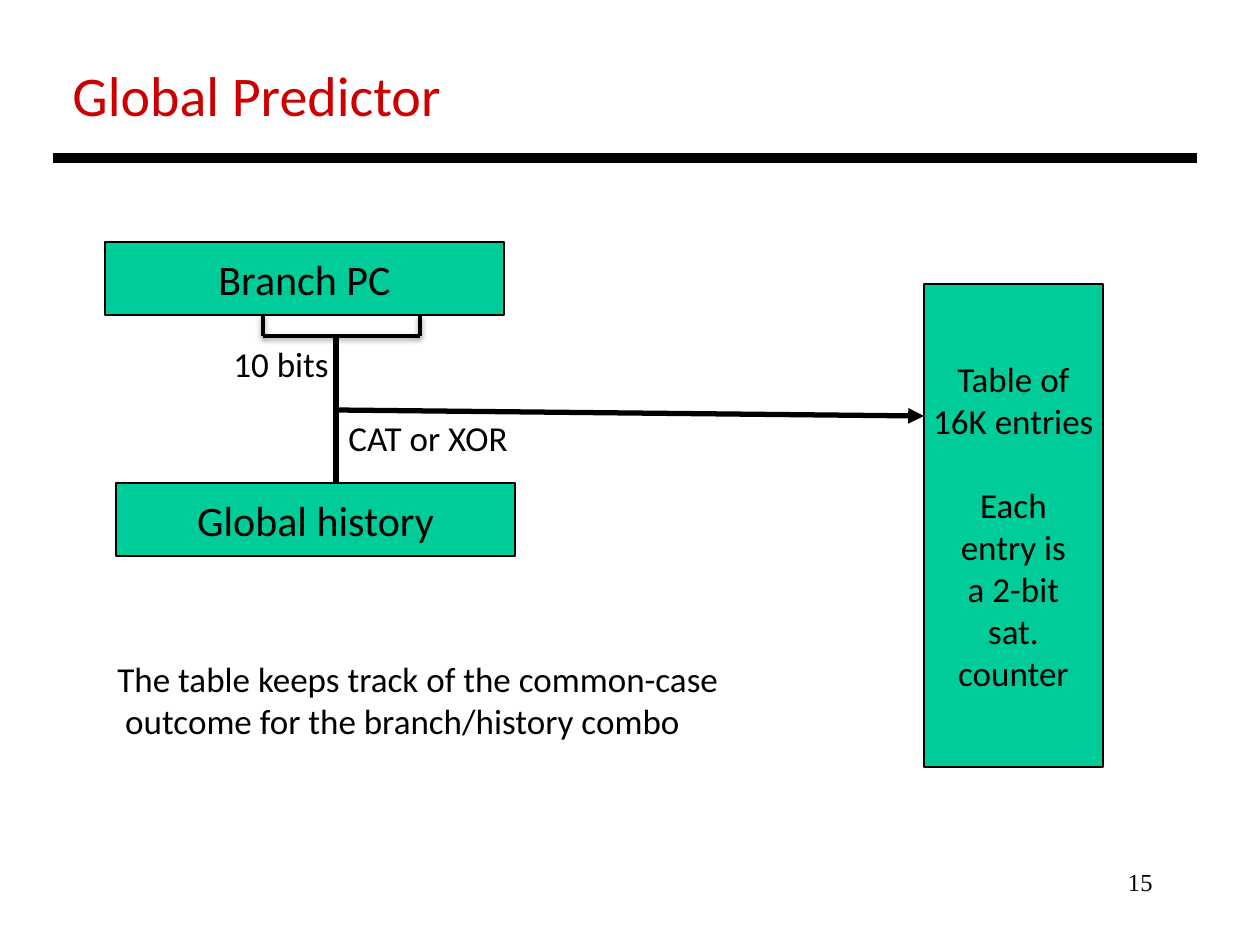
from lxml.etree import SubElement
from pptx import Presentation
from pptx.dml.color import RGBColor
from pptx.enum.shapes import MSO_CONNECTOR, MSO_SHAPE
from pptx.enum.text import MSO_ANCHOR, PP_ALIGN
from pptx.oxml.ns import qn
from pptx.util import Emu, Pt

SCALE = 914400 / 126
COLORS = {"ink": "000000", "title": "CC0000", "box": "00CC99"}


def px(n):
    return Emu(round(n * SCALE))


def color(name):
    return RGBColor.from_string(COLORS[name])


def write(frame, lines, size, ink="ink", font="Calibri", align=PP_ALIGN.LEFT):
    frame.word_wrap = False
    for i, line in enumerate(lines):
        para = frame.paragraphs[0] if i == 0 else frame.add_paragraph()
        para.text = line
        para.alignment = align
        para.font.size = Pt(size)
        para.font.name = font
        para.font.color.rgb = color(ink)


def add_text(slide, area, lines, size, **style):
    box = slide.shapes.add_textbox(*map(px, area))
    write(box.text_frame, lines, size, **style)


def add_box(slide, area, lines, size):
    box = slide.shapes.add_shape(MSO_SHAPE.RECTANGLE, *map(px, area))
    box.shadow.inherit = False
    box.fill.solid()
    box.fill.fore_color.rgb = color("box")
    box.line.color.rgb = color("ink")
    box.line.width = Pt(0.75)
    frame = box.text_frame
    frame.vertical_anchor = MSO_ANCHOR.MIDDLE
    write(frame, lines, size, align=PP_ALIGN.CENTER)
    return frame


def add_line(slide, ends, width, arrow=False, shadow=False):
    line = slide.shapes.add_connector(MSO_CONNECTOR.STRAIGHT, *map(px, ends))
    line.line.color.rgb = color("ink")
    line.line.width = Pt(width)
    if arrow:
        SubElement(line.line._get_or_add_ln(), qn("a:tailEnd"), type="triangle")
    effects = SubElement(line._element.spPr, qn("a:effectLst"))
    if shadow:
        outer = SubElement(effects, qn("a:outerShdw"), blurRad=str(Pt(3.1)),
                           dist=str(Pt(1.6)), dir="5400000", rotWithShape="0")
        tint = SubElement(outer, qn("a:srgbClr"), val=COLORS["ink"])
        SubElement(tint, qn("a:alpha"), val="38000")


def add_bracket(slide, left, right, top, base):
    for ends in ((left, top, left, base), (right, top, right, base),
                 (right, base, left, base)):
        add_line(slide, ends, 2, shadow=True)


def main():
    deck = Presentation()
    deck.slide_width, deck.slide_height = px(1260), px(945)
    slide = deck.slides.add_slide(deck.slide_layouts[6])

    add_text(slide, (60, 54, 398, 81), ["Global Predictor"], 32, ink="title")
    add_line(slide, (53, 158, 1197, 158), 6)

    add_box(slide, (105, 242, 399, 73), ["Branch PC"], 24)
    add_box(slide, (116, 483, 399, 73), ["Global history"], 24)
    table = add_box(slide, (924, 284, 179, 483),
                    ["Table of", "16K entries", "Each", "entry is",
                     "a 2-bit", "sat.", "counter"], 20)
    table.paragraphs[2].space_before = Pt(24)

    add_bracket(slide, 263, 420, 315, 336)
    add_line(slide, (336, 336, 336, 483), 3)
    add_line(slide, (336, 410, 924, 416), 3, arrow=True)

    add_text(slide, (221, 336, 122, 55), ["10 bits"], 20)
    add_text(slide, (336, 410, 186, 55), ["CAT or XOR"], 20)
    add_text(slide, (105, 651, 633, 97),
             ["The table keeps track of the common-case",
              " outcome for the branch/history combo"], 20)
    add_text(slide, (903, 861, 262, 63), ["15"], 14,
             font="Times New Roman", align=PP_ALIGN.RIGHT)

    deck.save("out.pptx")


if __name__ == "__main__":
    main()
